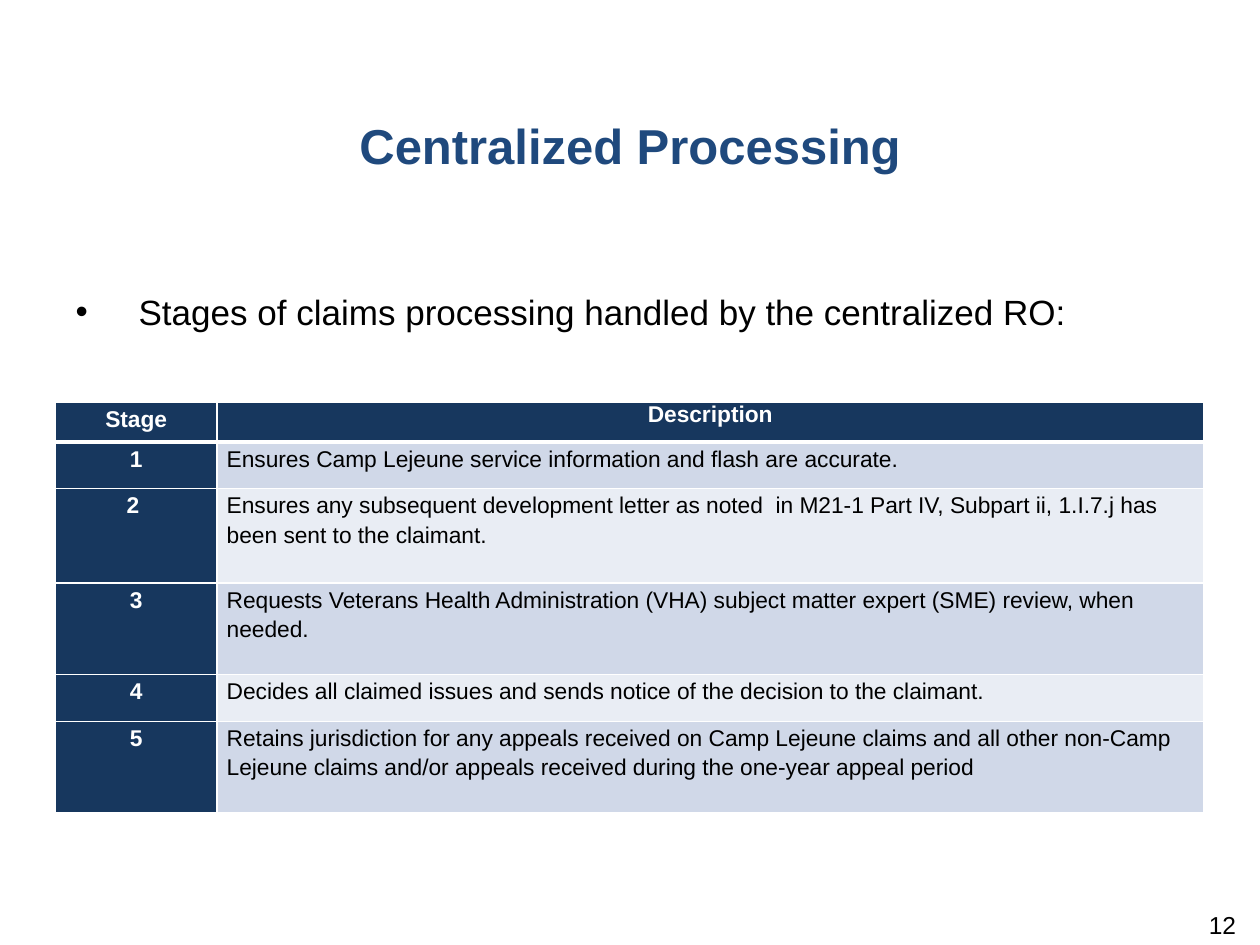
from lxml.etree import SubElement
from pptx import Presentation
from pptx.dml.color import RGBColor
from pptx.enum.text import MSO_ANCHOR, MSO_AUTO_SIZE, PP_ALIGN
from pptx.oxml.ns import qn
from pptx.util import Cm, Pt

COLORS = {
    "title": "1F497D", "text": "000000", "navy": "17375E",
    "white": "FFFFFF", "odd": "D0D8E8", "even": "E9EDF4",
}
STAGES = [
    ("1", "Ensures Camp Lejeune service information and flash are accurate."),
    ("2 ", "Ensures any subsequent development letter as noted  in M21-1 Part IV, "
           "Subpart ii, 1.I.7.j has been sent to the claimant."),
    ("3", "Requests Veterans Health Administration (VHA) subject matter expert "
          "(SME) review, when needed."),
    ("4", "Decides all claimed issues and sends notice of the decision to the claimant."),
    ("5", "Retains jurisdiction for any appeals received on Camp Lejeune claims and "
          "all other non-Camp Lejeune claims and/or appeals received during the "
          "one-year appeal period"),
]
HEIGHTS = [0.81, 0.94, 1.9, 1.85, 0.94, 1.85]


def tint(name):
    return RGBColor.from_string(COLORS[name])


def write(para, text, size, color, bold=False, align=PP_ALIGN.LEFT, after=6):
    para.alignment = align
    para.space_before, para.space_after = Pt(0), Pt(after)
    run = para.add_run()
    run.text = text
    font = run.font
    font.name, font.size, font.bold = "Arial", Pt(size), bold
    font.color.rgb = tint(color)


def place(shape, box):
    shape.left, shape.top, shape.width, shape.height = map(Cm, box)
    frame = shape.text_frame
    frame.word_wrap = True
    frame.auto_size = MSO_AUTO_SIZE.NONE
    frame.vertical_anchor = MSO_ANCHOR.TOP
    return frame


def add_title(slide, box):
    frame = place(slide.shapes.title, box)
    write(frame.paragraphs[0], "Centralized Processing", 28, "title", True,
          PP_ALIGN.CENTER)


def add_body(slide, box):
    para = place(slide.placeholders[1], box).paragraphs[0]
    # Hanging bullet
    props = para._p.get_or_add_pPr()
    props.set("marL", str(Cm(1.27)))
    props.set("indent", str(-Cm(1.27)))
    shade = SubElement(props, qn("a:buClr"))
    SubElement(shade, qn("a:srgbClr"), val=COLORS["text"])
    SubElement(props, qn("a:buFont"), typeface="Arial")
    SubElement(props, qn("a:buChar"), char="•")
    write(para, "Stages of claims processing handled by the centralized RO:", 20, "text")


def add_number(slide, box):
    frame = place(slide.shapes.add_textbox(*map(Cm, box)), box)
    frame.margin_top = 0
    write(frame.paragraphs[0], "12", 14, "text", align=PP_ALIGN.RIGHT)


def edge(cell, side, width):
    line = SubElement(cell._tc.get_or_add_tcPr(), qn("a:ln" + side), w=str(Pt(width)))
    fill = SubElement(line, qn("a:solidFill"))
    SubElement(fill, qn("a:srgbClr"), val=COLORS["white"])


def fill_cell(cell, text, row, col):
    head = row == 0 or col == 0
    # Thick rule between the header and the first stage
    widths = {"L": 1, "R": 1, "T": 3 if row == 1 else 1, "B": 3 if row == 0 else 1}
    for side, width in widths.items():
        edge(cell, side, width)
    cell.fill.solid()
    cell.fill.fore_color.rgb = tint("navy" if head else "odd" if row % 2 else "even")
    cell.margin_left = cell.margin_right = Cm(0.2)
    cell.margin_top, cell.margin_bottom = Cm(0.02), 0
    para = cell.text_frame.paragraphs[0]
    para.line_spacing = Pt(14.2) if (row, col) == (0, 1) else 1.15
    write(para, text, 13, "white" if head else "text", head,
          PP_ALIGN.CENTER if head else PP_ALIGN.LEFT, 0)


def add_stages(slide, box):
    rows = [("Stage", "Description"), *STAGES]
    table = slide.shapes.add_table(len(rows), 2, *map(Cm, box)).table
    first = 3.25
    table.columns[0].width = Cm(first)
    table.columns[1].width = Cm(box[2] - first)
    for row, (texts, height) in enumerate(zip(rows, HEIGHTS)):
        table.rows[row].height = Cm(height)
        for col, text in enumerate(texts):
            fill_cell(table.cell(row, col), text, row, col)


def main():
    deck = Presentation()
    deck.slide_width, deck.slide_height = Cm(25.4), Cm(19.05)
    slide = deck.slides.add_slide(deck.slide_layouts[1])
    add_title(slide, (0, 2.21, 25.4, 3.02))
    add_body(slide, (1.27, 5.72, 22.86, 10.87))
    add_number(slide, (19.25, 18.34, 5.92, 1.02))
    add_stages(slide, (1.12, 8.1, 23.14, sum(HEIGHTS)))
    deck.save("out.pptx")


if __name__ == "__main__":
    main()
